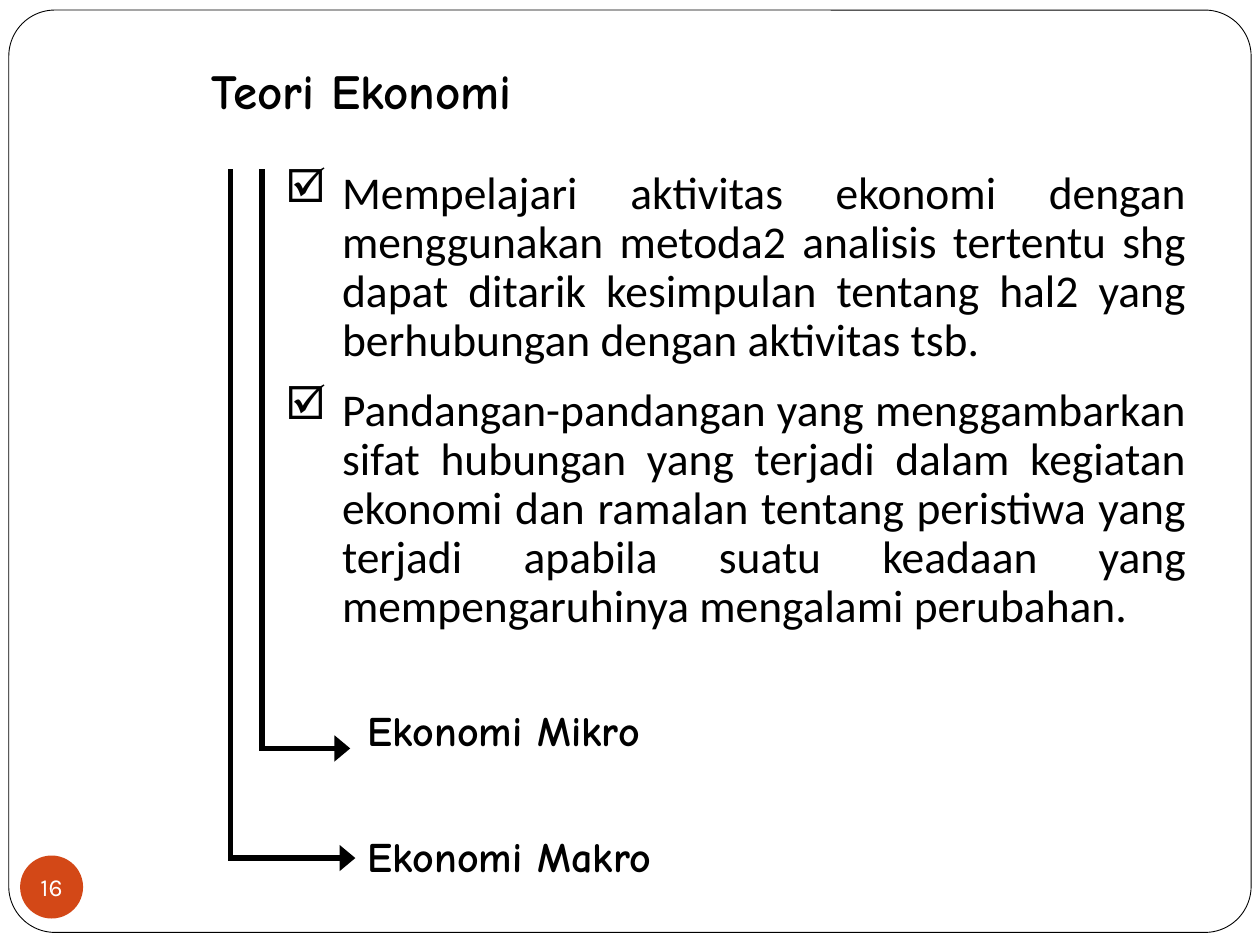
from lxml.etree import SubElement
from pptx import Presentation
from pptx.dml.color import RGBColor
from pptx.enum.shapes import MSO_SHAPE as SHAPE
from pptx.enum.text import MSO_ANCHOR as ANCHOR, PP_ALIGN as ALIGN
from pptx.oxml.ns import qn
from pptx.util import Inches, Pt

BLACK = RGBColor(0x00, 0x00, 0x00)
WHITE = RGBColor(0xFF, 0xFF, 0xFF)
ORANGE = RGBColor(0xD3, 0x48, 0x17)

COLS, ROWS = 100, 75
CELL = Inches(0.1)

INSETS = dict(margin_left=Inches(0.09), margin_right=Inches(0.09),
              margin_top=Inches(0.04), margin_bottom=Inches(0.04))
NO_INSETS = dict.fromkeys(INSETS, 0)
HEADING = dict(name="Comic Neue", size=Pt(24), bold=True)
TITLE = {**HEADING, "size": Pt(28)}
BODY = dict(name="Calibri", size=Pt(26))
NUMBER = dict(name="Karla", size=Pt(14))
CHECK_BOX = dict(typeface="Wingdings", charset="2"), "þ"

POINTS = [
    "Mempelajari aktivitas ekonomi dengan menggunakan metoda2 analisis tertentu "
    "shg dapat ditarik kesimpulan tentang hal2 yang berhubungan dengan aktivitas tsb.",
    "Pandangan-pandangan yang menggambarkan sifat hubungan yang terjadi dalam kegiatan "
    "ekonomi dan ramalan tentang peristiwa yang terjadi apabila suatu keadaan yang "
    "mempengaruhinya mengalami perubahan.",
]


def grid(*cells):
    return [round(c * CELL) for c in cells]


def apply(target, values):
    for name, value in values.items():
        setattr(target, name, value)


def write(tf, lines, font, color=BLACK, frame=None, para=None, bullet=None, indent=None):
    apply(tf, {"word_wrap": True, **(frame or {})})
    for i, line in enumerate(lines):
        p = tf.add_paragraph() if i else tf.paragraphs[0]
        apply(p, para or {})
        r = p.add_run()
        r.text = line
        apply(r.font, font)
        r.font.color.rgb = color
        pPr = p._p.get_or_add_pPr()
        if indent:
            left, first = indent
            pPr.set("marL", str(Inches(left)))
            pPr.set("indent", str(Inches(first)))
        if bullet:
            face, char = bullet
            SubElement(pPr, qn("a:buFont"), face)
            SubElement(pPr, qn("a:buChar"), char=char)


def add_text(s, cells, lines, font, **style):
    sp = s.shapes.add_textbox(*grid(*cells))
    write(sp.text_frame, lines, font, **style)


def add_shape(s, kind, cells, fill):
    sp = s.shapes.add_shape(kind, *grid(*cells))
    sp.shadow.inherit = False
    sp.fill.solid()
    sp.fill.fore_color.rgb = fill
    return sp


def add_frame(s):
    sp = add_shape(s, SHAPE.ROUNDED_RECTANGLE, (0.7, 0.8, 98.6, 73.2), WHITE)
    sp.adjustments[0] = 0.05
    sp.line.color.rgb = BLACK
    sp.line.width = Pt(0.5)


def add_elbow_arrow(s, left, top, right, bottom):
    x1, y1, x2, y2 = grid(left, top, right, bottom)
    builder = s.shapes.build_freeform(x1, y1)
    builder.add_line_segments([(x1, y2), (x2, y2)], close=False)
    sp = builder.convert_to_shape()
    sp.shadow.inherit = False
    sp.fill.background()
    sp.line.color.rgb = BLACK
    sp.line.width = Pt(3)
    ln = sp.line._get_or_add_ln()
    ln.set("cap", "sq")
    SubElement(ln, qn("a:miter"), lim="800000")
    SubElement(ln, qn("a:tailEnd"), type="triangle", w="lg", len="med")


def add_page_number(s, number):
    sp = add_shape(s, SHAPE.OVAL, (1.6, 67.9, 5, 5), ORANGE)
    sp.line.fill.background()
    write(sp.text_frame, [number], NUMBER, WHITE,
          frame={**NO_INSETS, "word_wrap": False, "vertical_anchor": ANCHOR.MIDDLE},
          para=dict(alignment=ALIGN.CENTER))


def main():
    prs = Presentation()
    prs.slide_width, prs.slide_height = grid(COLS, ROWS)
    s = prs.slides.add_slide(prs.slide_layouts[6])

    add_frame(s)
    add_text(s, (15.55, 15.3, 79.55, 36.7), POINTS, BODY, bullet=CHECK_BOX, indent=(1.07, -0.45),
             frame={**INSETS, "margin_bottom": Inches(0.4), "vertical_anchor": ANCHOR.MIDDLE},
             para=dict(alignment=ALIGN.JUSTIFY, line_spacing=0.9, space_before=Pt(12)))

    add_elbow_arrow(s, 20.8, 13.6, 27.8, 59.4)
    add_elbow_arrow(s, 18.3, 13.6, 28.2, 68.1)
    for label, top in (("Ekonomi Mikro", 56.1), ("Ekonomi Makro", 66.1)):
        add_text(s, (28.3, top, 32, 5), [label], HEADING, frame=INSETS,
                 indent=(0.63, -0.63), para=dict(line_spacing=0.85))

    add_text(s, (15.8, 5, 29.8, 5), ["Teori Ekonomi"], TITLE, indent=(0.93, -0.93),
             para=dict(alignment=ALIGN.JUSTIFY, line_spacing=0.85))
    add_page_number(s, "16")
    prs.save("out.pptx")


if __name__ == "__main__":
    main()
